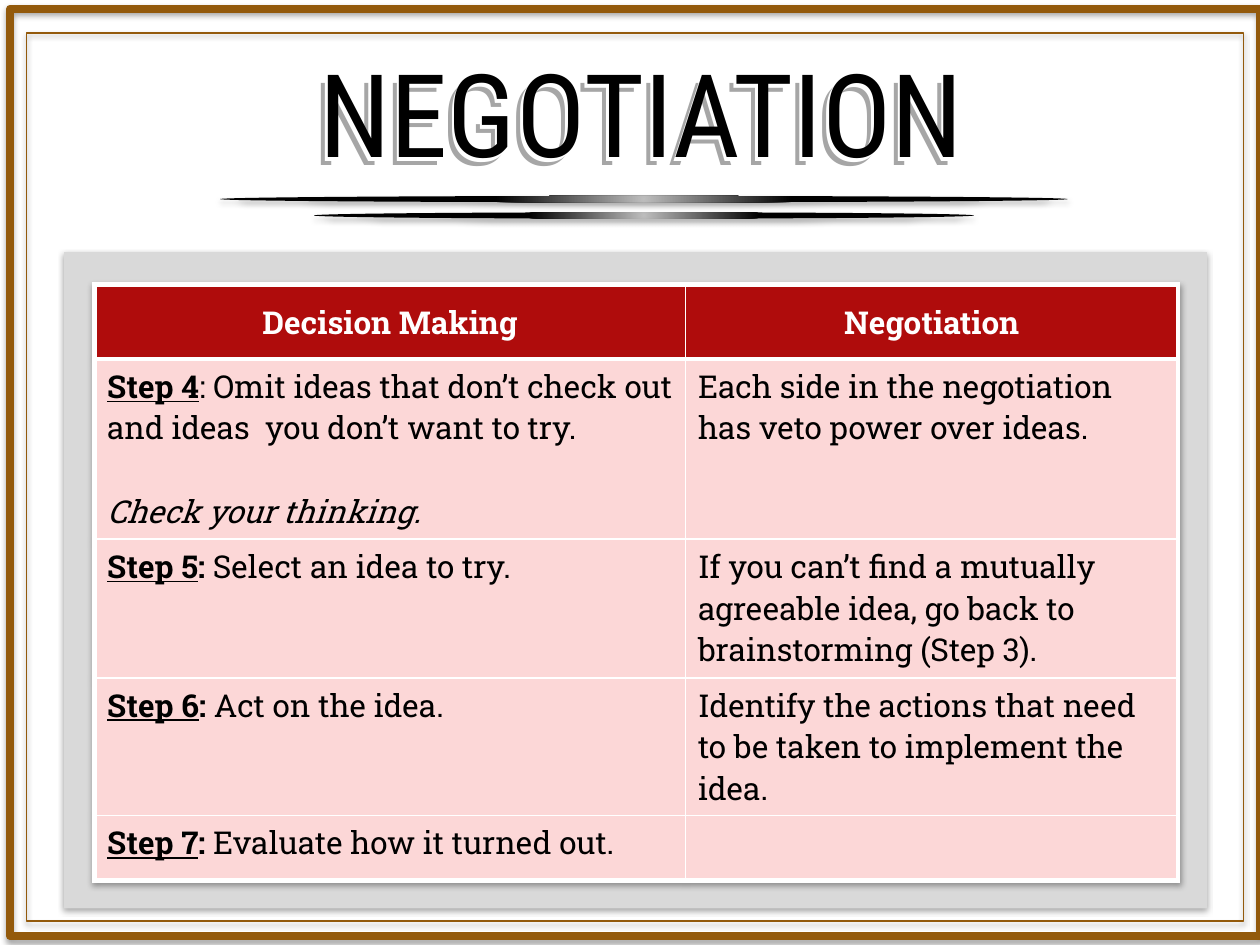
from dataclasses import dataclass

from pptx import Presentation
from pptx.dml.color import RGBColor
from pptx.enum.shapes import MSO_SHAPE
from pptx.enum.text import MSO_ANCHOR, MSO_AUTO_SIZE, PP_ALIGN
from pptx.oxml import parse_xml
from pptx.oxml.ns import nsdecls
from pptx.util import Inches, Pt

RECTANGLE, OVAL = MSO_SHAPE.RECTANGLE, MSO_SHAPE.OVAL
MIDDLE, TOP = MSO_ANCHOR.MIDDLE, MSO_ANCHOR.TOP
CENTER, LEFT = PP_ALIGN.CENTER, PP_ALIGN.LEFT
NO_AUTOFIT = MSO_AUTO_SIZE.NONE


@dataclass(frozen=True)
class Theme:
    """Colours, fonts and type sizes of the deck."""
    panel: str = "D9D9D9"
    frame: str = "935A0C"
    header: str = "AF0C0C"
    body: str = "FCD7D7"
    white: str = "FFFFFF"
    black: str = "000000"
    echo: str = "A6A6A6"
    shine: str = "BDBDBD"
    title_font: str = "Roboto Condensed"
    text_font: str = "Roboto Slab"
    title_size: int = 66
    text_size: int = 18
    line_gap: int = 24
    thick: int = 3
    thin: int = 1


THEME = Theme()
LABEL, BOLD, PLAIN, ITALIC = "bu", "b", "", "i"
TITLE = "NEGOTIATION"
HEADERS = ["Decision Making", "Negotiation"]
STEPS = [
    ([[("Step 4", LABEL),
       (": Omit ideas that don’t check out and ideas  you don’t want to try.", PLAIN)],
      [("Check your thinking.", ITALIC)]],
     "Each side in the negotiation has veto power over ideas."),
    ([[("Step 5", LABEL), (": ", BOLD), ("Select an idea to try.", PLAIN)]],
     "If you can’t find a mutually agreeable idea, go back to brainstorming (Step 3)."),
    ([[("Step 6", LABEL), (": ", BOLD), ("Act on the idea.", PLAIN)]],
     "Identify the actions that need to be taken to implement the idea."),
    ([[("Step 7", LABEL), (":", BOLD), (" Evaluate how it turned out.", PLAIN)]], ""),
]
COLUMN_WIDTHS = [4.69, 3.91]
ROW_HEIGHTS = [0.59, 1.43, 1.1, 1.05, 0.52]


def rgb(color):
    """Turn a hex string into a colour."""
    return RGBColor.from_string(color)


def soft_shadow():
    """Return an effect list with a soft shadow below."""
    return parse_xml(
        f'<a:effectLst {nsdecls("a")}><a:outerShdw blurRad="{Pt(3.1)}" dist="{Pt(1.8)}" '
        f'dir="5400000" rotWithShape="0"><a:srgbClr val="{THEME.black}">'
        '<a:alpha val="35000"/></a:srgbClr></a:outerShdw></a:effectLst>')


def add_shadowed(page, kind, box, fill=None, line=None, weight=0):
    """Add a preset shape with a soft shadow."""
    shape = page.shapes.add_shape(kind, *map(Inches, box))
    if fill:
        shape.fill.solid()
        shape.fill.fore_color.rgb = rgb(fill)
    else:
        shape.fill.background()
    if line:
        shape.line.color.rgb = rgb(line)
        shape.line.width = Pt(weight)
    else:
        shape.line.fill.background()
    shape._element.spPr.append(soft_shadow())
    return shape


def add_rule(page, center_x, center_y, width, height=0.05):
    """Add a tapered rule that shines in the middle."""
    box = (center_x - width / 2, center_y - height / 2, width, height)
    rule = add_shadowed(page, OVAL, box, fill=THEME.black)
    properties = rule._element.spPr
    gradient = parse_xml(
        f'<a:gradFill {nsdecls("a")} rotWithShape="1"><a:gsLst>'
        f'<a:gs pos="0"><a:srgbClr val="{THEME.shine}"/></a:gs>'
        f'<a:gs pos="35000"><a:srgbClr val="{THEME.black}"/></a:gs></a:gsLst>'
        '<a:path path="circle"><a:fillToRect l="50000" t="50000" r="50000" b="50000"/>'
        '</a:path></a:gradFill>')
    properties.replace(properties.solidFill, gradient) if hasattr(
        properties, "solidFill") else properties.replace(properties.eg_fillProperties, gradient)


def style_font(font, name, size, color):
    """Set the face, size and colour of a font."""
    font.name, font.size, font.color.rgb = name, Pt(size), rgb(color)


def add_title(page, box):
    """Place the title with two offset layers over it."""
    left, top, width, height = box
    layers = [(0, 0, THEME.echo), (0.03, -0.03, THEME.white), (0.05, -0.06, THEME.black)]
    for index, (shift_x, shift_y, color) in enumerate(layers):
        place = [Inches(value) for value in (left + shift_x, top + shift_y, width, height)]
        if index == 0:
            title = page.shapes.title
            title.left, title.top, title.width, title.height = place
        else:
            title = page.shapes.add_textbox(*place)
        frame = title.text_frame
        frame.text = TITLE
        frame.word_wrap = True
        frame.auto_size = NO_AUTOFIT
        frame.vertical_anchor = MIDDLE
        para = frame.paragraphs[0]
        para.alignment = CENTER
        style_font(para.runs[0].font, THEME.title_font, THEME.title_size, color)


def style_cell(cell, row, column):
    """Draw the borders and the fill of a table cell."""
    last_row, last_column = len(ROW_HEIGHTS) - 1, len(COLUMN_WIDTHS) - 1
    thick_sides = {"L": column == 0, "R": column == last_column,
                   "T": row <= 1, "B": row in (0, last_row)}
    properties = cell._tc.get_or_add_tcPr()
    for side, is_thick in thick_sides.items():
        width = Pt(THEME.thick if is_thick else THEME.thin)
        properties.append(parse_xml(
            f'<a:ln{side} {nsdecls("a")} w="{width}"><a:solidFill>'
            f'<a:srgbClr val="{THEME.white}"/></a:solidFill></a:ln{side}>'))
    cell.fill.solid()
    cell.fill.fore_color.rgb = rgb(THEME.body if row else THEME.header)


def write_cell(cell, paragraphs, color, alignment, anchor):
    """Write paragraphs of styled spans into a cell."""
    cell.vertical_anchor = anchor
    for index, spans in enumerate(paragraphs):
        frame = cell.text_frame
        para = frame.add_paragraph() if index else frame.paragraphs[0]
        para.alignment = alignment
        if index:
            para.space_before = Pt(THEME.line_gap)
        style_font(para.font, THEME.text_font, THEME.text_size, color)
        for text, style in spans:
            span = para.add_run()
            span.text = text
            style_font(span.font, THEME.text_font, THEME.text_size, color)
            span.font.bold = "b" in style
            span.font.italic = "i" in style
            span.font.underline = "u" in style


def add_steps_table(page, left, top):
    """Add the table that compares the two processes step by step."""
    size = (sum(COLUMN_WIDTHS), sum(ROW_HEIGHTS))
    table = page.shapes.add_table(len(ROW_HEIGHTS), len(COLUMN_WIDTHS),
                                  *map(Inches, (left, top, *size))).table
    table._tbl.tblPr.insert(0, soft_shadow())
    for column, width in zip(table.columns, COLUMN_WIDTHS):
        column.width = Inches(width)
    for row, height in zip(table.rows, ROW_HEIGHTS):
        row.height = Inches(height)
    content = [[[[(text, BOLD)]] for text in HEADERS]]
    content += [[step, [[(reply, PLAIN)]] if reply else []] for step, reply in STEPS]
    for row, cells in enumerate(content):
        look = (THEME.black, LEFT, TOP) if row else (THEME.white, CENTER, MIDDLE)
        for column, paragraphs in enumerate(cells):
            cell = table.cell(row, column)
            style_cell(cell, row, column)
            write_cell(cell, paragraphs, *look)


def main():
    """Build the slide and save the deck."""
    deck = Presentation()
    deck.slide_width, deck.slide_height = Inches(10), Inches(7.5)
    page = deck.slides.add_slide(deck.slide_layouts[5])
    add_shadowed(page, RECTANGLE, (0.51, 2, 9.07, 5.21), fill=THEME.panel)
    add_shadowed(page, RECTANGLE, (0.08, 0.07, 9.92, 7.36), line=THEME.frame, weight=4.5)
    add_title(page, (1.98, 0.32, 6.12, 1.25))
    add_rule(page, 5.11, 1.58, 6.73)
    add_shadowed(page, RECTANGLE, (0.21, 0.26, 9.66, 7.05), line=THEME.frame, weight=1)
    add_steps_table(page, 0.75, 2.26)
    add_rule(page, 5.11, 1.71, 5.24)
    deck.save("out.pptx")


if __name__ == "__main__":
    main()
